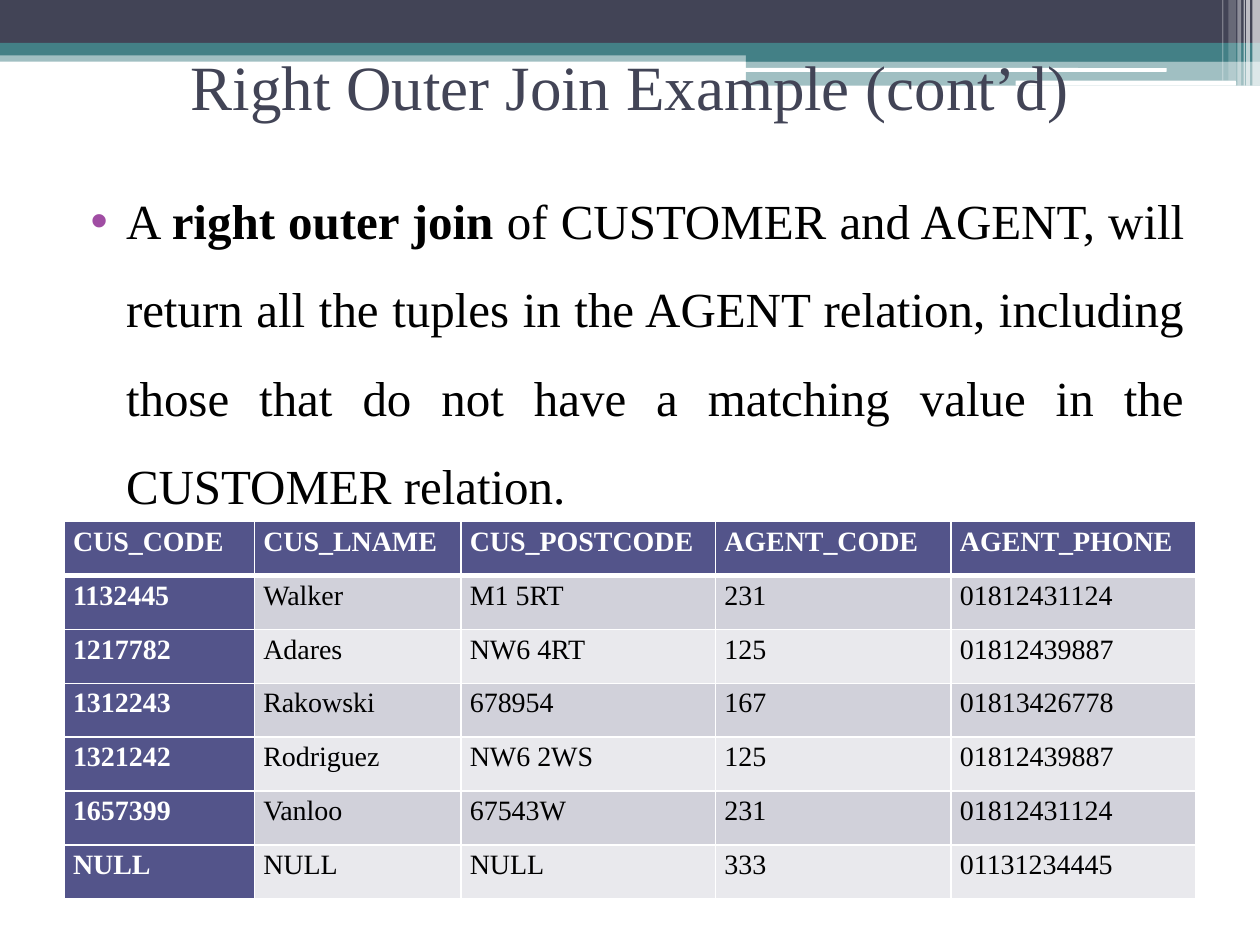
"""Build the right outer join example slide: banner, title, definition and result table."""
from lxml import etree
from pptx import Presentation
from pptx.dml.color import RGBColor
from pptx.enum import shapes, text
from pptx.oxml import ns
from pptx.util import Pt

FONT = "Times New Roman"
SLATE = RGBColor(0x42, 0x44, 0x56)
TEAL = RGBColor(0x43, 0x80, 0x86)
WHITE = RGBColor(0xFF, 0xFF, 0xFF)
BLACK = RGBColor(0x00, 0x00, 0x00)
PURPLE = RGBColor(0xA0, 0x4D, 0xA3)
INDIGO = RGBColor(0x53, 0x54, 0x8A)
BANDS = (RGBColor(0xD1, 0xD1, 0xDA), RGBColor(0xE9, 0xE9, 0xED))

RECT = shapes.MSO_SHAPE.RECTANGLE
ROUND = shapes.MSO_SHAPE.ROUNDED_RECTANGLE

BANNER = [
    (RECT, (0, 28.8, 720, 6.48), TEAL, 50),
    (RECT, (0, 0, 720, 24.48), SLATE, 100),
    (RECT, (0, 24.48, 720, 7.2), TEAL, 100),
    (RECT, (426.24, 28.08, 293.76, 7.2), TEAL, 100),
    (RECT, (426.24, 34.56, 293.76, 14.4), TEAL, 50),
    (ROUND, (425.52, 38.88, 241.2, 2.16), WHITE, 100),
    (ROUND, (580.32, 46.08, 126, 2.88), WHITE, 100),
]
STRIPES = [
    (715.68, 4.32, 48.96, 65),
    (712.08, 2.16, 48.96, 65),
    (710.64, 0.72, 48.96, 60),
    (707.04, 2.16, 48.96, 40),
    (702, 4.32, 46.08, 20),
    (698.4, 0.72, 46.08, 30),
]
DEFINITION = [
    ("A ", False),
    ("right outer join ", True),
    ("of CUSTOMER and AGENT, will return all the tuples in the AGENT relation, "
     "including those that do not have a matching value in the CUSTOMER relation.", False),
]
COLUMN_WIDTHS = (108.72, 118.08, 145.44, 134.64, 139.68)
JOIN_RESULT = [
    ("CUS_CODE", "CUS_LNAME", "CUS_POSTCODE", "AGENT_CODE", "AGENT_PHONE"),
    ("1132445", "Walker", "M1 5RT", "231", "01812431124"),
    ("1217782", "Adares", "NW6 4RT", "125", "01812439887"),
    ("1312243", "Rakowski", "678954", "167", "01813426778"),
    ("1321242", "Rodriguez", "NW6 2WS", "125", "01812439887"),
    ("1657399", "Vanloo", "67543W", "231", "01812431124"),
    ("NULL", "NULL", "NULL", "333", "01131234445"),
]


def write(paragraph, words, *, size, color=BLACK, bold=False, align=None, spacing=None):
    """Add one formatted run to a paragraph."""
    run = paragraph.add_run()
    run.text = words
    run.font.name, run.font.size, run.font.bold = FONT, Pt(size), bold
    run.font.color.rgb = color
    if align is not None:
        paragraph.alignment = align
    if spacing is not None:
        paragraph.line_spacing = spacing


def add_xml(parent, tag, **attributes):
    """Append a drawing element to a parent element."""
    return etree.SubElement(parent, ns.qn(tag), attributes)


class SlideBuilder:
    """Hold the current slide and draw each kind of element on it."""

    def __init__(self, slide):
        self.slide = slide

    def bar(self, kind, box, color, opacity=100):
        """Draw a borderless banner bar."""
        bar = self.slide.shapes.add_shape(kind, *map(Pt, box))
        bar.shadow.inherit = False
        bar.line.fill.background()
        bar.fill.solid()
        bar.fill.fore_color.rgb = color
        if opacity < 100:
            tint = bar.element.spPr.find(".//" + ns.qn("a:srgbClr"))
            add_xml(tint, "a:alpha", val=str(opacity * 1000))

    def placeholder(self, index, box, anchor):
        """Place a template placeholder in front and return its first paragraph."""
        holder = self.slide.placeholders[index]
        holder.left, holder.top, holder.width, holder.height = map(Pt, box)
        self.slide.shapes.element.append(holder.element)
        frame = holder.text_frame
        frame.auto_size = text.MSO_AUTO_SIZE.NONE
        frame.word_wrap = True
        frame.vertical_anchor = anchor
        return frame.paragraphs[0]

    def title(self, words, box):
        """Write the centred title."""
        heading = self.placeholder(0, box, text.MSO_ANCHOR.MIDDLE)
        write(heading, words, size=36, color=SLATE, align=text.PP_ALIGN.CENTER)

    def bullet(self, parts, box):
        """Write the justified bullet from plain and bold parts."""
        item = self.placeholder(1, box, text.MSO_ANCHOR.TOP)
        item.space_before = Pt(3)
        for words, bold in parts:
            write(item, words, size=28, bold=bold, align=text.PP_ALIGN.JUSTIFY, spacing=1.5)
        properties = item._p.get_or_add_pPr()
        properties.set("marL", str(Pt(28.8)))
        properties.set("indent", str(Pt(-20.16)))
        add_xml(add_xml(properties, "a:buClr"), "a:srgbClr", val=str(PURPLE))
        add_xml(properties, "a:buFont", typeface="Arial")
        add_xml(properties, "a:buChar", char="•")

    def borders(self, cell, top, bottom):
        """Give a cell white borders, one point wide at the sides."""
        properties = cell._tc.get_or_add_tcPr()
        for side, width in (("L", 1), ("R", 1), ("T", top), ("B", bottom)):
            line = add_xml(properties, f"a:ln{side}", w=str(Pt(width)))
            add_xml(add_xml(line, "a:solidFill"), "a:srgbClr", val=str(WHITE))

    def table(self, rows, widths, left, top, height):
        """Draw a banded table with a dark first row and first column."""
        frame = self.slide.shapes.add_table(
            len(rows), len(widths), Pt(left), Pt(top), Pt(sum(widths)), Pt(height))
        grid = frame.table
        grid.first_col = True
        for column, width in zip(grid.columns, widths):
            column.width = Pt(width)
        for r, values in enumerate(rows):
            grid.rows[r].height = Pt(height / len(rows))
            for c, value in enumerate(values):
                cell = grid.cell(r, c)
                heading = r == 0 or c == 0
                cell.margin_left = cell.margin_right = Pt(5.04)
                cell.margin_top = cell.margin_bottom = 0
                self.borders(cell, top=3 if r == 1 else 1, bottom=3 if r == 0 else 1)
                cell.fill.solid()
                cell.fill.fore_color.rgb = INDIGO if heading else BANDS[(r - 1) % 2]
                write(cell.text_frame.paragraphs[0], value, size=16, bold=heading,
                      color=WHITE if heading else BLACK, spacing=1.15)


def main():
    """Build and save the slide."""
    deck = Presentation()
    deck.slide_width, deck.slide_height = Pt(720), Pt(540)
    builder = SlideBuilder(deck.slides.add_slide(deck.slide_layouts[1]))
    for kind, box, color, opacity in BANNER:
        builder.bar(kind, box, color, opacity)
    for left, width, height, opacity in STRIPES:
        builder.bar(RECT, (left, 0, width, height), WHITE, opacity)
    builder.title("Right Outer Join Example (cont’d)", (36, 31.68, 648, 33.84))
    builder.bullet(DEFINITION, (36, 88.56, 648, 429.12))
    builder.table(JOIN_RESULT, COLUMN_WIDTHS, left=36.72, top=298.08, height=215.6)
    deck.save("out.pptx")


if __name__ == "__main__":
    main()
